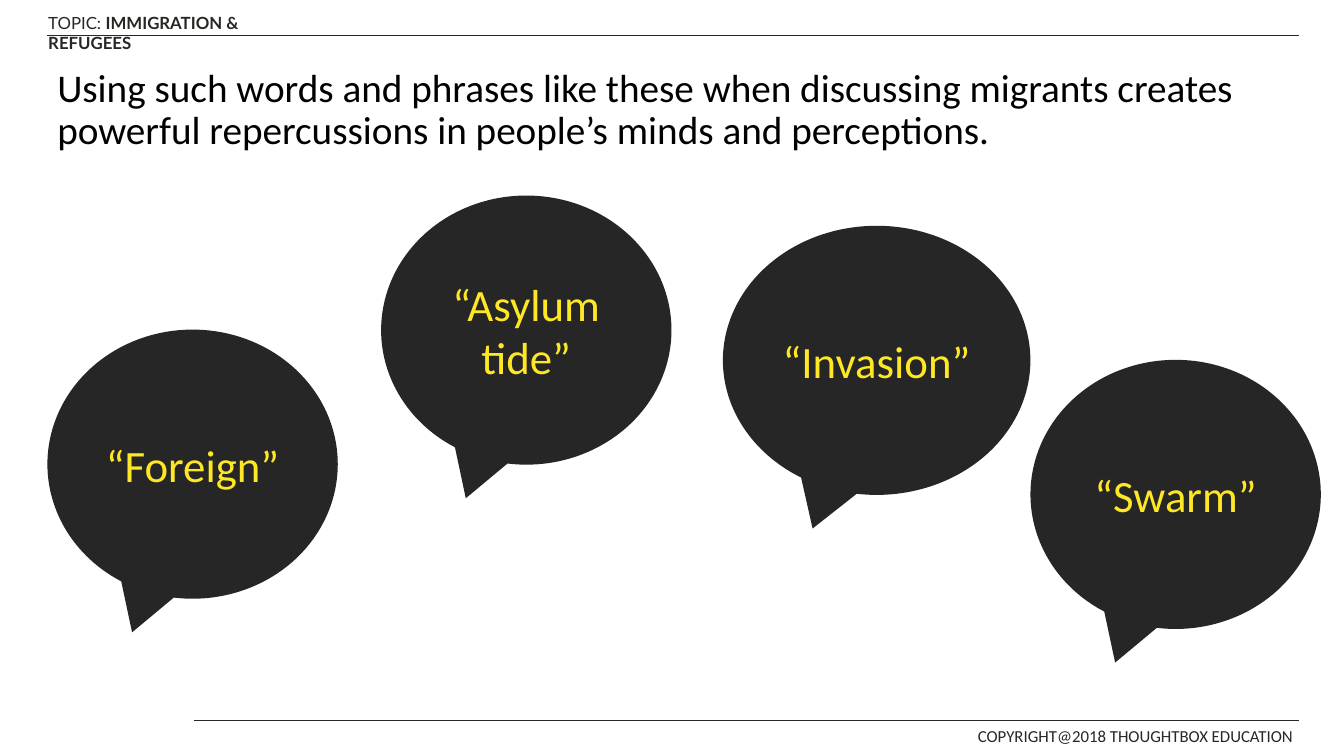
from dataclasses import dataclass

from lxml import etree
from pptx import Presentation
from pptx.dml.color import RGBColor
from pptx.enum.shapes import MSO_CONNECTOR, MSO_SHAPE
from pptx.enum.text import MSO_ANCHOR, PP_ALIGN
from pptx.oxml.ns import qn
from pptx.util import Inches, Pt

STRAIGHT = MSO_CONNECTOR.STRAIGHT
CALLOUT = MSO_SHAPE.OVAL_CALLOUT
CENTER = PP_ALIGN.CENTER
TOP, MIDDLE, BOTTOM = MSO_ANCHOR.TOP, MSO_ANCHOR.MIDDLE, MSO_ANCHOR.BOTTOM

# Content: runs are (text, bold)
TOPIC = [("TOPIC: ", False), ("IMMIGRATION & REFUGEES", True)]
TITLE = [("Using such words and phrases like these when discussing migrants "
          "creates powerful repercussions in people’s minds and perceptions.", False)]
COPYRIGHT = [("COPYRIGHT@2018 THOUGHTBOX EDUCATION", False)]
# Bubbles: phrase, left, top, width
BUBBLES = [
    ("“Foreign”", 0.47, 3.27, 2.88),
    ("“Asylum tide”", 3.78, 1.94, 2.88),
    ("“Invasion”", 7.17, 2.24, 3.05),
    ("“Swarm”", 10.22, 3.57, 2.88),
]


@dataclass(frozen=True)
class Theme:
    ink: RGBColor = RGBColor(0x25, 0x28, 0x23)
    title: RGBColor = RGBColor(0, 0, 0)
    bubble: RGBColor = RGBColor(0x26, 0x26, 0x26)
    phrase: RGBColor = RGBColor(0xFE, 0xE7, 0x25)
    body_font: str = "Calibri"
    topic_font: str = "Lato"
    small: int = 12
    heading: int = 28
    large: int = 32


THEME = Theme()

# Layout in inches
SLIDE_W, SLIDE_H = 13.33, 7.5
MARGIN = 0.47
RULE_END = 12.88
HEADER_Y, FOOTER_Y = 0.35, 7.15
BUBBLE_H = 2.67

prs = Presentation()
prs.slide_width, prs.slide_height = Inches(SLIDE_W), Inches(SLIDE_H)
slide = prs.slides.add_slide(prs.slide_layouts[6])


def write(sp, runs, font, size, color, anchor=TOP, align=None, spacing=None):
    tf = sp.text_frame
    tf.word_wrap = True
    tf.vertical_anchor = anchor
    p = tf.paragraphs[0]
    p.alignment = align
    p.line_spacing = spacing
    for text, bold in runs:
        r = p.add_run()
        r.text = text
        r.font.name = font
        r.font.size = Pt(size)
        r.font.bold = bold
        r.font.color.rgb = color


def add_text(box, *args, **kwargs):
    sp = slide.shapes.add_textbox(*map(Inches, box))
    write(sp, *args, **kwargs)


def add_rule(left, y):
    line = slide.shapes.add_connector(
        STRAIGHT, Inches(left), Inches(y), Inches(RULE_END), Inches(y))
    line.line.color.rgb = THEME.ink
    line.line.width = Pt(1)
    etree.SubElement(line._element.spPr, qn("a:effectLst"))


# Header and footer
add_text((0.38, 0.08, 2.69, 0.3), TOPIC, THEME.topic_font, THEME.small, THEME.ink)
add_rule(MARGIN, HEADER_Y)
add_text((9.6, FOOTER_Y, 3.4, 0.31), COPYRIGHT, THEME.body_font, THEME.small, THEME.ink)
add_rule(1.92, FOOTER_Y)

# Title
add_text((MARGIN, 0.7, 12.27, 0.87), TITLE, THEME.body_font, THEME.heading,
         THEME.title, anchor=BOTTOM, spacing=0.9)

# Speech bubbles
for phrase, left, top, width in BUBBLES:
    sp = slide.shapes.add_shape(
        CALLOUT, Inches(left), Inches(top), Inches(width), Inches(BUBBLE_H))
    sp.shadow.inherit = False
    sp.fill.solid()
    sp.fill.fore_color.rgb = THEME.bubble
    sp.line.fill.background()
    write(sp, [(phrase, False)], THEME.body_font, THEME.large, THEME.phrase,
          anchor=MIDDLE, align=CENTER)

prs.save("out.pptx")
